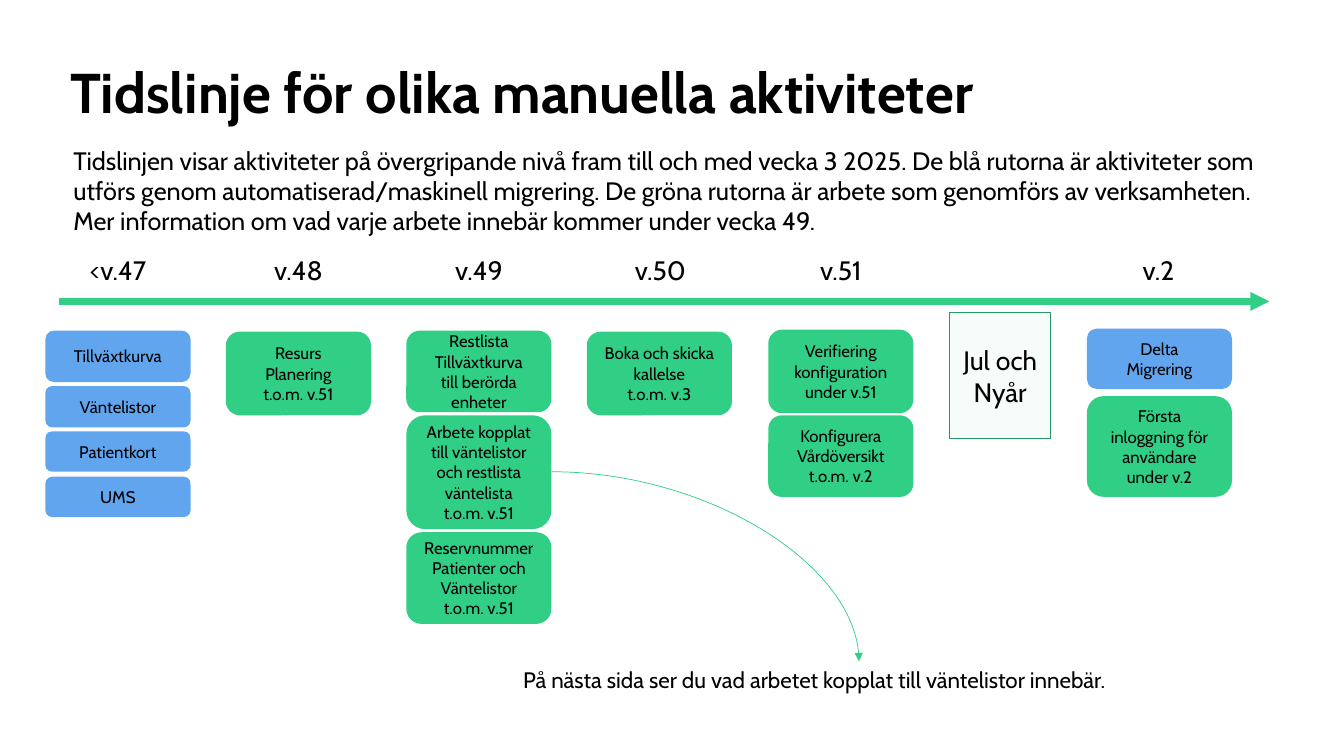
from lxml.etree import SubElement
from pptx import Presentation
from pptx.dml.color import RGBColor
from pptx.enum.shapes import MSO_CONNECTOR as CONNECTOR, MSO_SHAPE as SHAPE
from pptx.enum.text import MSO_ANCHOR as ANCHOR, PP_ALIGN as ALIGN
from pptx.oxml.ns import qn
from pptx.util import Pt

PX = 9144  # EMU per px, 100 px to the inch
BLACK = RGBColor(0x00, 0x00, 0x00)
GREEN = RGBColor(0x31, 0xCE, 0x85)
BLUE = RGBColor(0x61, 0xA5, 0xEE)
PALE = RGBColor(0xF6, 0xFC, 0xF9)
DARK_GREEN = RGBColor(0x24, 0x98, 0x62)

TITLE = {"size": Pt(40), "bold": True}
BODY = {"size": Pt(18)}
WEEK = {"size": Pt(19)}
ACTIVITY = {"size": Pt(12)}
NOTE = {"size": Pt(16)}

presentation = Presentation()
presentation.slide_width = 1333 * PX
presentation.slide_height = 750 * PX
slide = presentation.slides.add_slide(presentation.slide_layouts[6])


def add_text(box, text, text_format, align=ALIGN.CENTER, kind=None, fill=None):
    """Add a text box, or a filled shape of the given kind, with its text."""
    position = [length * PX for length in box]
    if kind is None:
        shape = slide.shapes.add_textbox(*position)
    else:
        shape = slide.shapes.add_shape(kind, *position)
        shape.shadow.inherit = False
        shape.fill.solid()
        shape.fill.fore_color.rgb = fill
        shape.line.fill.background()
    frame = shape.text_frame
    frame.word_wrap = True
    frame.vertical_anchor = ANCHOR.MIDDLE if kind else ANCHOR.TOP
    frame.text = text
    for paragraph in frame.paragraphs:
        paragraph.alignment = align
        paragraph.font.name = "Cabin"
        paragraph.font.color.rgb = BLACK
        for name, value in text_format.items():
            setattr(paragraph.font, name, value)
    return shape


def add_arrow(kind, ends, width):
    """Add a green connector with a triangle at its end."""
    arrow = slide.shapes.add_connector(kind, *[length * PX for length in ends])
    arrow.line.color.rgb = GREEN
    arrow.line.width = Pt(width)
    SubElement(arrow.line._get_or_add_ln(), qn("a:tailEnd"), type="triangle")
    SubElement(arrow._element.spPr, qn("a:effectLst"))
    return arrow


# Title and introduction
title = add_text((60, 60, 1213, 157), "Tidslinje för olika manuella aktiviteter",
                 TITLE, ALIGN.LEFT)
title.text_frame.paragraphs[0].line_spacing = 0.9
add_text((63, 139, 1213, 472),
         "Tidslinjen visar aktiviteter på övergripande nivå fram till och med "
         "vecka 3 2025. De blå rutorna är aktiviteter som utförs genom "
         "automatiserad/maskinell migrering. De gröna rutorna är arbete som "
         "genomförs av verksamheten. Mer information om vad varje arbete "
         "innebär kommer under vecka 49.", BODY, ALIGN.LEFT)

# Timeline
add_arrow(CONNECTOR.STRAIGHT, (59, 299, 1259, 299), 4.5)

# Weeks: label, centre of label, left of boxes, boxes (top, height, fill, text)
BOX_WIDTH = 144
LABEL_WIDTH = 104
weeks = [
    ("<v.47", 117, 45, [
        (328, 51, BLUE, "Tillväxtkurva"),
        (383, 41, BLUE, "Väntelistor"),
        (428, 40, BLUE, "Patientkort"),
        (473, 40, BLUE, "UMS"),
    ]),
    ("v.48", 296, 224, [
        (329, 83, GREEN, "Resurs\nPlanering\nt.o.m. v.51"),
    ]),
    ("v.49", 475, 403, [
        (328, 81, GREEN, "Restlista\nTillväxtkurva\ntill berörda enheter"),
        (412, 113, GREEN, "Arbete kopplat till väntelistor och restlista "
                          "väntelista\nt.o.m. v.51"),
        (528, 91, GREEN, "Reservnummer Patienter och Väntelistor\nt.o.m. v.51"),
    ]),
    ("v.50", 655, 582, [
        (329, 83, GREEN, "Boka och skicka kallelse\nt.o.m. v.3"),
    ]),
    ("v.51", 834, 762, [
        (327, 83, GREEN, "Verifiering konfiguration\nunder v.51"),
        (412, 81, GREEN, "Konfigurera Vårdöversikt\nt.o.m. v.2"),
    ]),
    ("v.2", 1149, 1078, [
        (326, 60, BLUE, "Delta\nMigrering"),
        (393, 100, GREEN, "Första inloggning för användare\nunder v.2"),
    ]),
]
for label, centre, left, boxes in weeks:
    add_text((centre - LABEL_WIDTH // 2, 247, LABEL_WIDTH, 42), label, WEEK)
    for top, height, fill, text in boxes:
        add_text((left, top, BOX_WIDTH, height), text, ACTIVITY,
                 kind=SHAPE.ROUNDED_RECTANGLE, fill=fill)

# Holiday break
holiday = add_text((942, 310, 100, 125), "Jul och Nyår", WEEK,
                   kind=SHAPE.RECTANGLE, fill=PALE)
holiday.line.color.rgb = DARK_GREEN
holiday.line.width = Pt(1)

# Note about the waiting lists, with a quarter-turn arrow to it
add_text((509, 656, 686, 37),
         "På nästa sida ser du vad arbetet kopplat till väntelistor innebär.",
         NOTE, ALIGN.LEFT)
curve = add_arrow(CONNECTOR.CURVE, (547, 468, 852, 656), 0.5)
curve._element.spPr.find(qn("a:prstGeom")).set("prst", "curvedConnector2")

presentation.save("out.pptx")
